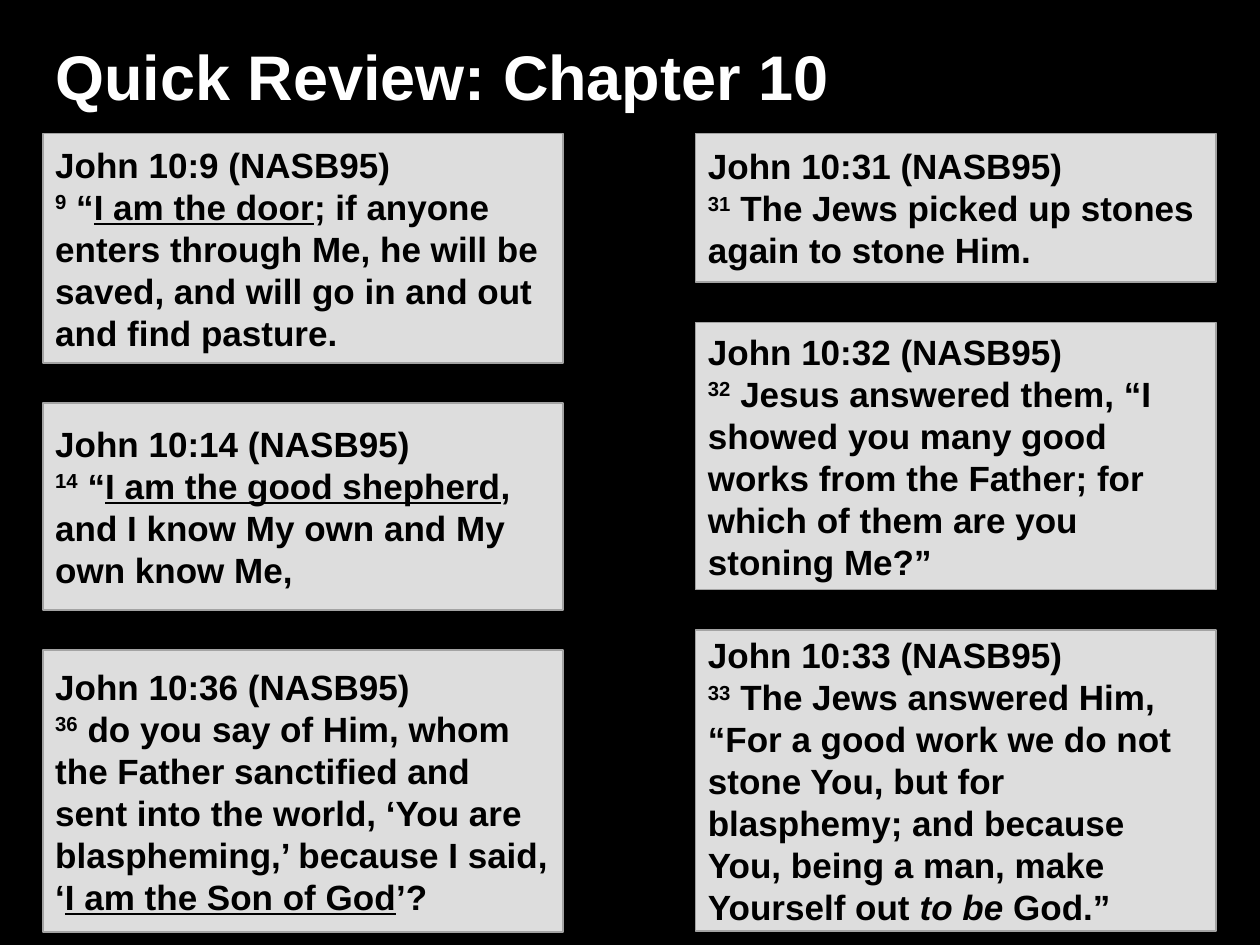
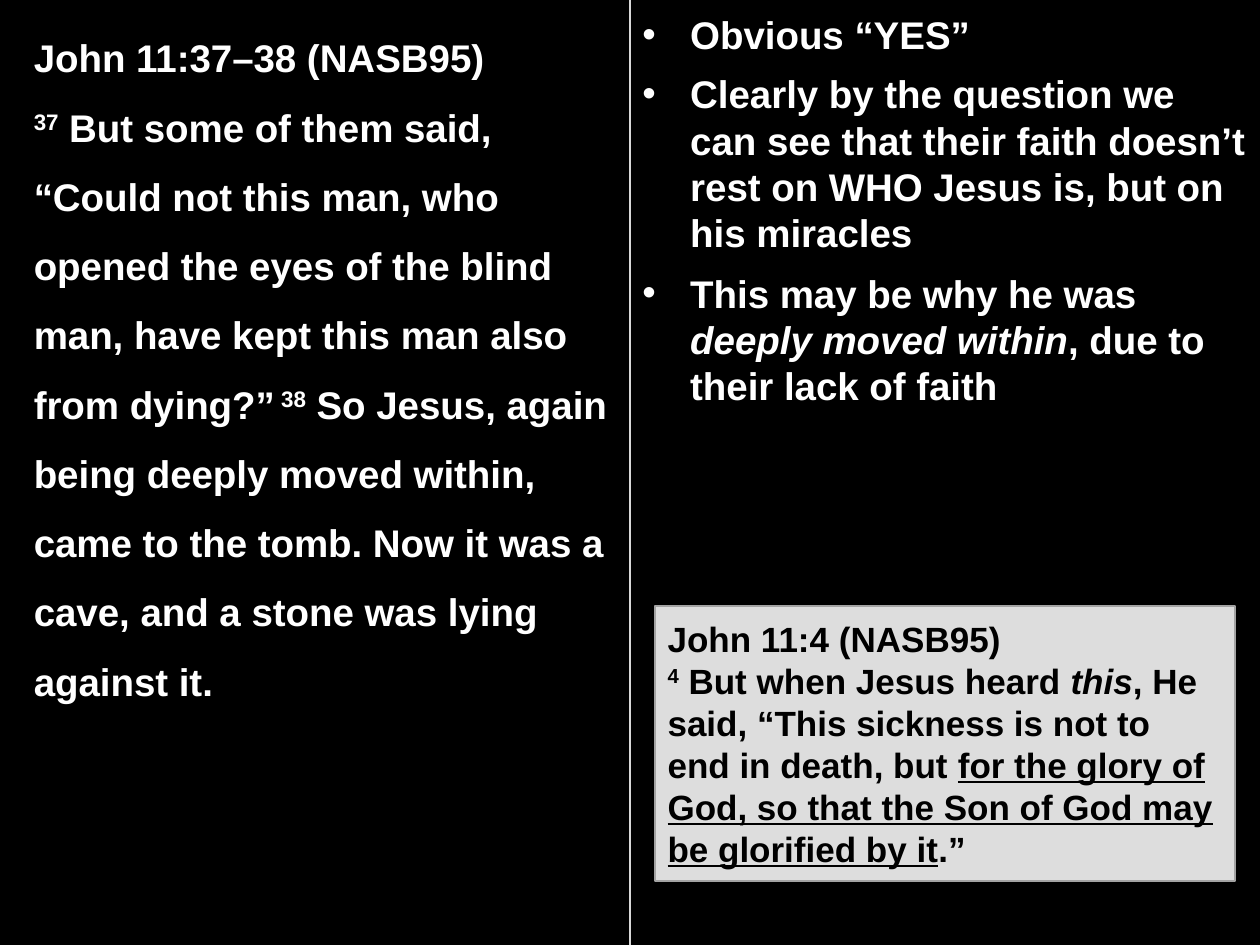
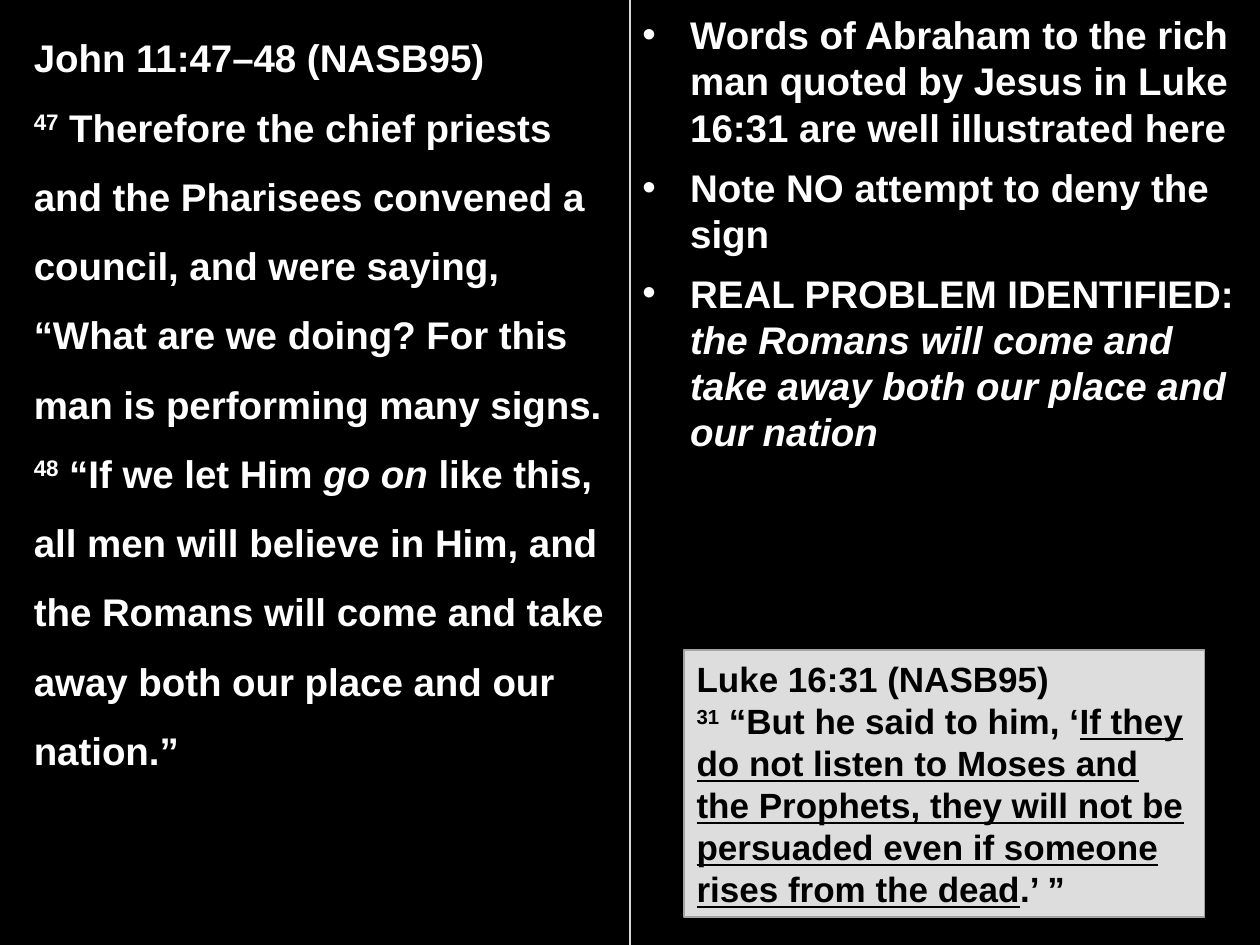
from lxml import etree
from pptx import Presentation
from pptx.dml.color import RGBColor
from pptx.enum.shapes import MSO_CONNECTOR, MSO_SHAPE
from pptx.enum.text import MSO_ANCHOR, MSO_AUTO_SIZE, PP_ALIGN
from pptx.oxml.ns import qn
from pptx.util import Inches, Pt

RECTANGLE = MSO_SHAPE.RECTANGLE
STRAIGHT = MSO_CONNECTOR.STRAIGHT
MIDDLE, TOP = MSO_ANCHOR.MIDDLE, MSO_ANCHOR.TOP
GROW, FIXED = MSO_AUTO_SIZE.SHAPE_TO_FIT_TEXT, MSO_AUTO_SIZE.NONE
LEFT = PP_ALIGN.LEFT

BLACK, WHITE = "000000", "FFFFFF"
CARD_FILL, CARD_EDGE, DIVIDER = "DDDDDD", "A3A3A3", "D8D8D8"

TITLE_FONT = {"name": "Arial", "size": Pt(36), "bold": True}
BODY_FONT = {"name": "Arial", "size": Pt(22), "bold": True}
CARD_FONT = {"name": "Arial", "size": Pt(20), "bold": True}
MARKS = {"_": "underline", "*": "italic", "^": "superscript"}

SLIDE_WIDTH, SLIDE_HEIGHT = 10, 7.5
MARGIN = 0.34
CARD_WIDTH, CARD_GAP, CARDS_TOP = 4.13, 0.32, 1.06
CENTER = SLIDE_WIDTH / 2
PANEL_TOP = 0.04
LINE_HEIGHT, BOX_PADDING, BULLET_INDENT = 0.37, 0.1, 0.38

# Each column: left edge, then (height, reference, verse) for each card
REVIEW_COLUMNS = [
    (MARGIN, [
        (1.82, "John 10:9 (NASB95)",
         "^9^ “_I am the door_; if anyone enters through Me, he will be saved, "
         "and will go in and out and find pasture."),
        (1.64, "John 10:14 (NASB95)",
         "^14^ “_I am the good shepherd_, and I know My own and My own know Me,"),
        (2.24, "John 10:36 (NASB95)",
         "^36^ do you say of Him, whom the Father sanctified and sent into the "
         "world, ‘You are blaspheming,’ because I said, ‘_I am the Son of God_’?"),
    ]),
    (5.52, [
        (1.18, "John 10:31 (NASB95)",
         "^31^ The Jews picked up stones again to stone Him."),
        (2.12, "John 10:32 (NASB95)",
         "^32^ Jesus answered them, “I showed you many good works from the "
         "Father; for which of them are you stoning Me?”"),
        (2.39, "John 10:33 (NASB95)",
         "^33^ The Jews answered Him, “For a good work we do not stone You, but "
         "for blasphemy; and because You, being a man, make Yourself out "
         "*to be* God.”"),
    ]),
]

# Bullets are (number of lines, text)
STUDIES = [
    {
        "passage": [
            "John 11:37–38 (NASB95)",
            "^37^ But some of them said, “Could not this man, who opened the eyes "
            "of the blind man, have kept this man also from dying?”^ 38^ So Jesus, "
            "again being deeply moved within, came to the tomb. Now it was a cave, "
            "and a stone was lying against it."],
        "passage_height": 5.65,
        "bullets": [
            (1, "Obvious “YES”"),
            (4, "Clearly by the question we can see that their faith doesn’t rest "
                "on WHO Jesus is, but on his miracles"),
            (3, "This may be why he was *deeply moved within*, due to their lack "
                "of faith")],
        "card_box": (5.2, 4.81, 4.6, 2.18),
        "card": [
            "John 11:4 (NASB95)",
            "^4^ But when Jesus heard *this*, He said, “This sickness is not to "
            "end in death, but _for the glory of God, so that the Son of God may "
            "be glorified by it_.”"],
    },
    {
        "passage": [
            "John 11:47–48 (NASB95)",
            "^47^ Therefore the chief priests and the Pharisees convened a council, "
            "and were saying, “What are we doing? For this man is performing many "
            "signs. ^48^ “If we let Him *go on* like this, all men will believe in "
            "Him, and the Romans will come and take away both our place and our "
            "nation.”"],
        "passage_height": 6.21,
        "bullets": [
            (3, "Words of Abraham to the rich man quoted by Jesus in Luke 16:31 "
                "are well illustrated here"),
            (2, "Note NO attempt to deny the sign"),
            (4, "REAL PROBLEM IDENTIFIED: *the Romans will come and take away both "
                "our place and our nation*")],
        "card_box": (5.43, 5.16, CARD_WIDTH, 2.12),
        "card": [
            "Luke 16:31 (NASB95)",
            "^31^ “But he said to him, ‘_If they do not listen to Moses and the "
            "Prophets, they will not be persuaded even if someone rises from the "
            "dead_.’ ”"],
    },
]


def color(hex_value):
    return RGBColor.from_string(hex_value)


def split_runs(text):
    """Yield (text, style) pieces; each mark in MARKS switches its style on or off."""
    piece, style = "", None
    for character in text:
        if character in MARKS:
            if piece:
                yield piece, style
            piece, style = "", None if style else MARKS[character]
        else:
            piece += character
    if piece:
        yield piece, style


def add_runs(paragraph, text, font_values, hex_value):
    for piece, style in split_runs(text):
        run = paragraph.add_run()
        run.text = piece
        for name, value in font_values.items():
            setattr(run.font, name, value)
        run.font.color.rgb = color(hex_value)
        if style == "superscript":
            run._r.get_or_add_rPr().set("baseline", "30000")
        elif style:
            setattr(run.font, style, True)


def fill_text(shape, texts, font_values, hex_value, anchor=TOP, fit=FIXED, spacing=None):
    frame = shape.text_frame
    frame.word_wrap = True
    frame.auto_size = fit
    frame.vertical_anchor = anchor
    for index, text in enumerate(texts):
        paragraph = frame.add_paragraph() if index else frame.paragraphs[0]
        paragraph.alignment = LEFT
        if spacing:
            paragraph.line_spacing = spacing
        add_runs(paragraph, text, font_values, hex_value)


def add_text(slide, box, texts, font_values, **layout):
    shape = slide.shapes.add_textbox(*map(Inches, box))
    fill_text(shape, texts, font_values, WHITE, **layout)
    return shape


def add_card(slide, box, texts):
    card = slide.shapes.add_shape(RECTANGLE, *map(Inches, box))
    card.shadow.inherit = False
    card.fill.solid()
    card.fill.fore_color.rgb = color(CARD_FILL)
    card.line.color.rgb = color(CARD_EDGE)
    card.line.width = Pt(1)
    fill_text(card, texts, CARD_FONT, BLACK, anchor=MIDDLE)


def add_bullets(slide, bullets):
    """Stack one box per bullet, each as tall as its lines."""
    top = PANEL_TOP
    for line_count, text in bullets:
        height = BOX_PADDING + LINE_HEIGHT * line_count
        shape = add_text(slide, (CENTER, top, CENTER, height), [text], BODY_FONT, fit=GROW)
        properties = shape.text_frame.paragraphs[0]._p.get_or_add_pPr()
        properties.set("marL", str(Inches(BULLET_INDENT)))
        properties.set("indent", str(-Inches(BULLET_INDENT)))
        etree.SubElement(properties, qn("a:buFont"), typeface="Arial")
        etree.SubElement(properties, qn("a:buChar"), char="•")
        top += height


def add_divider(slide):
    line = slide.shapes.add_connector(
        STRAIGHT, Inches(CENTER), Inches(0), Inches(CENTER), Inches(SLIDE_HEIGHT))
    line.line.color.rgb = color(DIVIDER)
    line.line.width = Pt(0.75)
    etree.SubElement(line._element.spPr, qn("a:effectLst"))


def add_slide(presentation):
    slide = presentation.slides.add_slide(presentation.slide_layouts[6])
    slide.background.fill.solid()
    slide.background.fill.fore_color.rgb = color(BLACK)
    return slide


def add_review_slide(presentation):
    slide = add_slide(presentation)
    add_text(slide, (MARGIN, 0.25, SLIDE_WIDTH - 2 * MARGIN, 0.74),
             ["Quick Review: Chapter 10"], TITLE_FONT)
    for left, cards in REVIEW_COLUMNS:
        top = CARDS_TOP
        for height, reference, verse in cards:
            add_card(slide, (left, top, CARD_WIDTH, height), [reference, verse])
            top += height + CARD_GAP


def add_study_slide(presentation, study):
    slide = add_slide(presentation)
    add_text(slide, (0.17, PANEL_TOP, 4.83, study["passage_height"]),
             study["passage"], BODY_FONT, fit=GROW, spacing=1.5)
    add_divider(slide)
    add_bullets(slide, study["bullets"])
    add_card(slide, study["card_box"], study["card"])


def main():
    presentation = Presentation()
    presentation.slide_width = Inches(SLIDE_WIDTH)
    presentation.slide_height = Inches(SLIDE_HEIGHT)
    add_review_slide(presentation)
    for study in STUDIES:
        add_study_slide(presentation, study)
    presentation.save("out.pptx")


if __name__ == "__main__":
    main()
